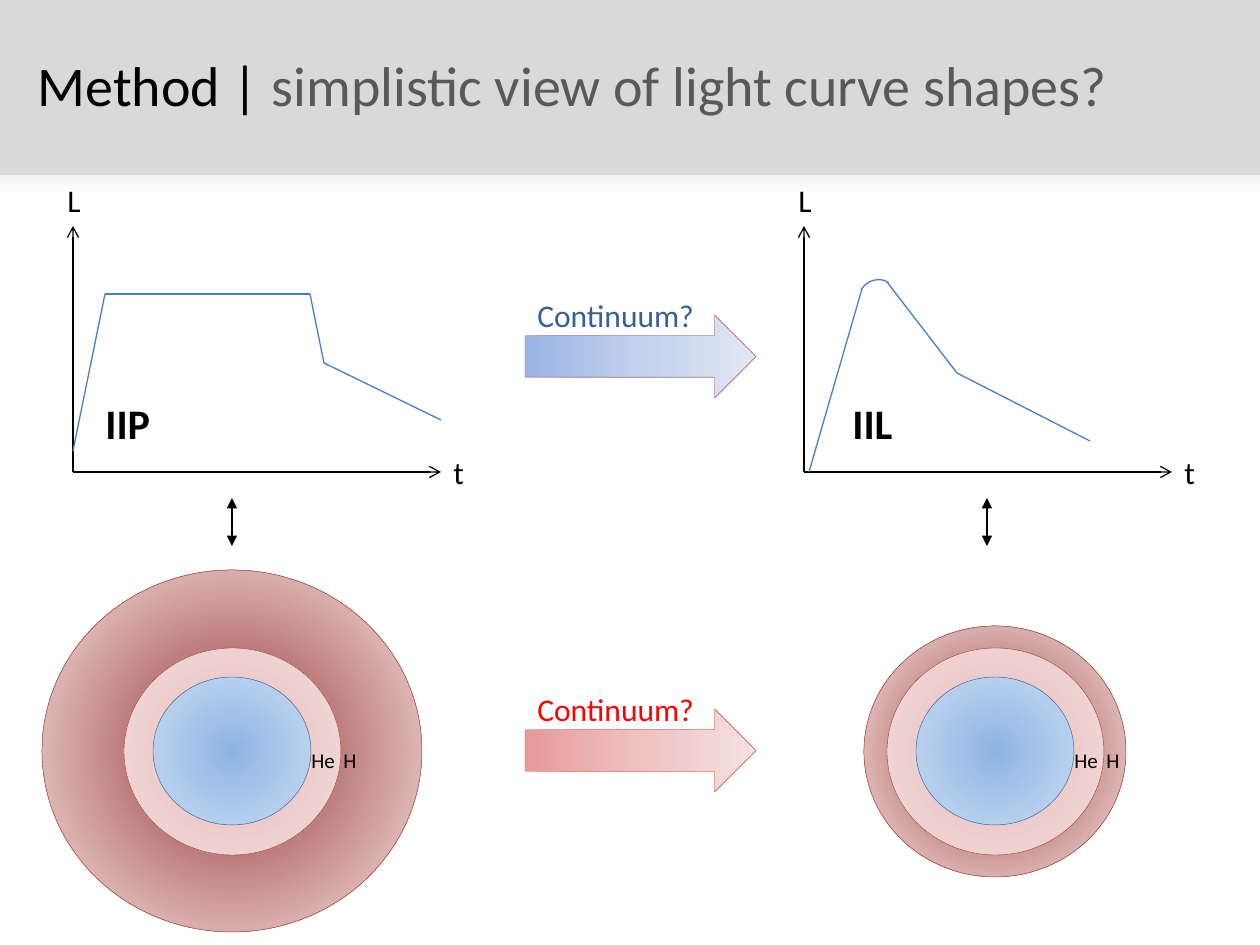
from dataclasses import dataclass
from itertools import pairwise
from typing import Optional

from lxml import etree
from pptx import Presentation
from pptx import util as u
from pptx.dml.color import RGBColor
from pptx.enum import shapes, text
from pptx.oxml import ns

EMU_PER_PX = 914400 / 126
FONT = "Calibri"
COLORS = {
    "black": "000000", "gray": "595959", "banner": "D9D9D9",
    "curve": "4B7EBC", "red": "FF0000", "navy": "376092",
    "shell_line": "953735", "core_line": "3A5F8C", "arrow_line": "C0504D",
}
FADE = [(0, "F2F2F2"), (100, "FFFFFF")]
BLUE_FADE = [(0, "9AB5E4"), (50, "C2D1ED"), (100, "E1E8F5")]
RED_FADE = [(0, "E79A99"), (50, "EEC2C1"), (100, "F6E1E1")]
HYDROGEN = [(0, "953735"), (95, "F2DCDB")]
HELIUM = [(0, "E6B9B8"), (95, "F2DCDB")]
CORE = [(0, "8EB4E3"), (95, "C6D9F1")]
CENTER_X_SHAPE = shapes.MSO_SHAPE
Point = tuple[int, int]
Stops = list[tuple[int, str]]


@dataclass
class Box:
    left: int
    top: int
    width: int
    height: int

    def emu(self) -> list[int]:
        return [px(n) for n in (self.left, self.top, self.width, self.height)]


@dataclass
class Label:
    words: str
    box: Box
    size: int
    color: str = "black"
    bold: bool = False


@dataclass
class Star:
    center_x: int
    envelope: Point


@dataclass
class Continuum:
    top: int
    stops: Stops
    color: str


STARS = [Star(232, (380, 362)), Star(995, (262, 251))]
STAR_Y = 751
AXES_LEFT = [73, 804]
AXES_BOTTOM = 472
CURVES = [
    [(73, 451), (105, 294), (310, 294), (324, 363), (441, 420)],
    [(809, 472), (862, 289)],
    [(887, 282), (957, 373), (1090, 441)],
]
CONTINUA = [Continuum(709, RED_FADE, "red"), Continuum(315, BLUE_FADE, "navy")]
TYPE_LABELS = [
    Label("IIP", Box(93, 391, 74, 63), 24, bold=True),
    Label("IIL", Box(840, 391, 72, 63), 24, bold=True),
]
LINK_XS = [232, 987]


def px(n: int) -> int:
    return round(n * EMU_PER_PX)


def rgb(name: str) -> RGBColor:
    return RGBColor.from_string(COLORS[name])


def set_gradient(shape, stops: Stops, angle: Optional[int]) -> None:
    shape.fill.solid()
    props = shape._element.spPr
    gradient = etree.Element(ns.qn("a:gradFill"), rotWithShape="1")
    stop_list = etree.SubElement(gradient, ns.qn("a:gsLst"))
    for position, color in stops:
        stop = etree.SubElement(stop_list, ns.qn("a:gs"), pos=str(position * 1000))
        etree.SubElement(stop, ns.qn("a:srgbClr"), val=color)
    if angle is None:
        radial = etree.SubElement(gradient, ns.qn("a:path"), path="circle")
        etree.SubElement(radial, ns.qn("a:fillToRect"),
                         l="50000", t="50000", r="50000", b="50000")
    else:
        etree.SubElement(gradient, ns.qn("a:lin"), ang=str(angle * 60000), scaled="0")
    props.replace(props.find(ns.qn("a:solidFill")), gradient)


def add_shape(page, kind, box: Box, fill: Optional[str] = None,
              stops: Optional[Stops] = None, angle: Optional[int] = None,
              line: Optional[str] = None, weight: float = 0.25):
    shape = page.shapes.add_shape(kind, *box.emu())
    shape.shadow.inherit = False
    if stops:
        set_gradient(shape, stops, angle)
    elif fill:
        shape.fill.solid()
        shape.fill.fore_color.rgb = rgb(fill)
    else:
        shape.fill.background()
    if line:
        shape.line.color.rgb = rgb(line)
        shape.line.width = u.Pt(weight)
    else:
        shape.line.fill.background()
    return shape


def add_line(page, start: Point, end: Point, color: str = "black",
             head: Optional[str] = None, tail: Optional[str] = None) -> None:
    line = page.shapes.add_connector(
        shapes.MSO_CONNECTOR.STRAIGHT, *(px(n) for n in start + end))
    line.line.color.rgb = rgb(color)
    line.line.width = u.Pt(0.75)
    outline = line.line._get_or_add_ln()
    for tag, arrow in (("a:headEnd", head), ("a:tailEnd", tail)):
        if arrow:
            etree.SubElement(outline, ns.qn(tag), type=arrow)
    etree.SubElement(line._element.spPr, ns.qn("a:effectLst"))


def add_label(page, label: Label) -> None:
    frame = page.shapes.add_textbox(*label.box.emu()).text_frame
    frame.word_wrap = False
    frame.auto_size = text.MSO_AUTO_SIZE.SHAPE_TO_FIT_TEXT
    para = frame.paragraphs[0]
    para.text = label.words
    para.font.name = FONT
    para.font.size = u.Pt(label.size)
    para.font.bold = label.bold
    para.font.color.rgb = rgb(label.color)


def add_title(page) -> None:
    title = page.shapes.title
    title.left, title.top, title.width, title.height = Box(25, 44, 1211, 81).emu()
    frame = title.text_frame
    frame.word_wrap = True
    frame.auto_size = text.MSO_AUTO_SIZE.NONE
    frame.vertical_anchor = text.MSO_ANCHOR.TOP
    para = frame.paragraphs[0]
    para.alignment = text.PP_ALIGN.LEFT
    para.font.name = FONT
    para.font.size = u.Pt(32)
    for words, color in (("Method | ", "black"),
                         ("simplistic view of light curve shapes?", "gray")):
        span = para.add_run()
        span.text = words
        span.font.color.rgb = rgb(color)
    title._element.getparent().append(title._element)


def add_star(page, star: Star) -> None:
    layers = [(star.envelope, HYDROGEN, "shell_line"),
              ((217, 207), HELIUM, "shell_line"),
              ((158, 148), CORE, "core_line")]
    for (width, height), stops, line in layers:
        box = Box(star.center_x - width // 2, STAR_Y - height // 2, width, height)
        add_shape(page, shapes.MSO_SHAPE.OVAL, box, stops=stops, line=line)
    add_label(page, Label("H", Box(star.center_x + 99, 741, 39, 38), 12))
    add_label(page, Label("He", Box(star.center_x + 67, 741, 49, 38), 12))


def add_axes(page, left: int) -> None:
    origin = (left, AXES_BOTTOM)
    add_line(page, origin, (left + 368, AXES_BOTTOM), tail="arrow")
    add_line(page, origin, (left, AXES_BOTTOM - 246), tail="arrow")
    add_label(page, Label("t", Box(left + 368, AXES_BOTTOM - 25, 37, 50), 18))
    add_label(page, Label("L", Box(left - 18, AXES_BOTTOM - 297, 40, 50), 18))


def add_continuum(page, item: Continuum) -> None:
    add_shape(page, shapes.MSO_SHAPE.RIGHT_ARROW, Box(525, item.top, 231, 83),
              stops=item.stops, angle=0, line="arrow_line")
    add_label(page, Label("Continuum?", Box(525, item.top - 25, 189, 50), 18, item.color))


def main() -> None:
    deck = Presentation()
    deck.slide_width, deck.slide_height = px(1260), px(945)
    page = deck.slides.add_slide(deck.slide_layouts[5])
    add_shape(page, shapes.MSO_SHAPE.RECTANGLE, Box(0, 0, 1260, 175), fill="banner")
    add_title(page)
    add_shape(page, shapes.MSO_SHAPE.RECTANGLE, Box(0, 175, 1260, 20), stops=FADE, angle=90)
    for star in STARS:
        add_star(page, star)
    for left in AXES_LEFT:
        add_axes(page, left)
    for curve in CURVES:
        for start, end in pairwise(curve):
            add_line(page, start, end, "curve")
    peak = add_shape(page, shapes.MSO_SHAPE.ARC, Box(856, 281, 42, 38),
                     line="curve", weight=0.75)
    peak.rotation = 303.5
    for x in LINK_XS:
        add_line(page, (x, 498), (x, 546), head="triangle", tail="triangle")
    for item in CONTINUA:
        add_continuum(page, item)
    for label in TYPE_LABELS:
        add_label(page, label)
    deck.save("out.pptx")


if __name__ == "__main__":
    main()
